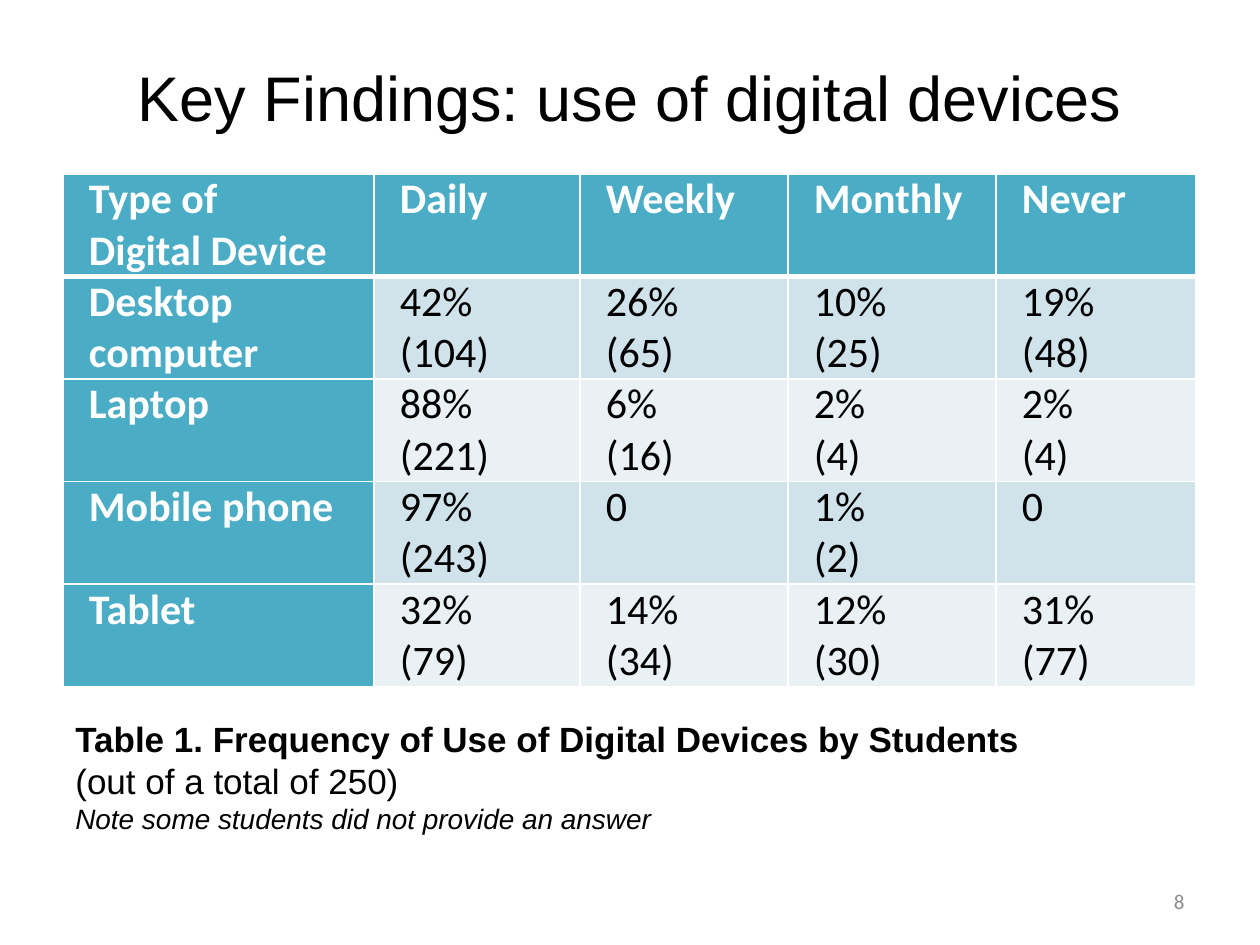
from lxml.etree import SubElement
from pptx import Presentation
from pptx.dml.color import RGBColor
from pptx.enum.text import MSO_ANCHOR, PP_ALIGN
from pptx.oxml.ns import qn
from pptx.util import Emu, Pt

PX_PER_INCH = 126
WHITE, BLACK, GREY = "FFFFFF", "000000", "8C8C8C"
TEAL, BANDS = "4BACC6", ("D0E3EA", "E9F1F5")

COLUMN_WIDTHS = (311, 206, 208, 208, 200)
ROW_HEIGHT = 102
ROWS = (
    ("Type of\nDigital Device", "Daily", "Weekly", "Monthly", "Never"),
    ("Desktop computer", "42%\n(104)", "26%\n(65)", "10%\n(25)", "19%\n(48)"),
    ("Laptop", "88%\n(221)", "6%\n(16)", "2%\n(4)", "2%\n(4)"),
    ("Mobile phone", "97%\n(243)", "0", "1%\n(2)", "0"),
    ("Tablet", "32%\n(79)", "14%\n(34)", "12%\n(30)", "31%\n(77)"),
)
CAPTION = (
    ("Table 1. Frequency of Use of Digital Devices by Students", 20, True, False),
    ("(out of a total of 250)", 20, False, False),
    ("Note some students did not provide an answer", 16, False, True),
)


def px(length):
    return Emu(round(length * 914400 / PX_PER_INCH))


def rgb(color):
    return RGBColor.from_string(color)


def style(para, font, size, color, bold=False, italic=False, align=PP_ALIGN.LEFT):
    para.alignment = align
    for span in para.runs:
        span.font.name = font
        span.font.size = Pt(size)
        span.font.color.rgb = rgb(color)
        span.font.bold = bold
        span.font.italic = italic


def set_borders(cell, widths):
    """Draw white borders; widths maps lnL, lnR, lnT and lnB to points."""
    properties = cell._tc.get_or_add_tcPr()
    for position, (side, width) in enumerate(widths.items()):
        line = SubElement(properties, qn(f"a:{side}"), w=str(Pt(width)))
        fill = SubElement(line, qn("a:solidFill"))
        SubElement(fill, qn("a:srgbClr"), val=WHITE)
        properties.insert(position, line)


def add_title(page, left, top, width, height):
    title = page.shapes.title
    title.left, title.top, title.width, title.height = map(px, (left, top, width, height))
    frame = title.text_frame
    frame.text = "Key Findings: use of digital devices"
    frame.vertical_anchor = MSO_ANCHOR.MIDDLE
    style(frame.paragraphs[0], "Arial", 36, BLACK, align=PP_ALIGN.CENTER)


def add_device_table(page, left, top):
    size = sum(COLUMN_WIDTHS), ROW_HEIGHT * len(ROWS)
    table = page.shapes.add_table(
        len(ROWS), len(COLUMN_WIDTHS), *map(px, (left, top, *size))
    ).table
    table.first_col = True
    for column, width in zip(table.columns, COLUMN_WIDTHS):
        column.width = px(width)
    for row_index, texts in enumerate(ROWS):
        table.rows[row_index].height = px(ROW_HEIGHT)
        for column_index, text in enumerate(texts):
            cell = table.cell(row_index, column_index)
            heading = row_index == 0 or column_index == 0
            cell.text = text
            cell.margin_left = cell.margin_right = px(26)
            cell.margin_top = cell.margin_bottom = 0
            cell.fill.solid()
            cell.fill.fore_color.rgb = rgb(TEAL if heading else BANDS[(row_index - 1) % 2])
            set_borders(cell, {
                "lnL": 1,
                "lnR": 1,
                "lnT": 3 if row_index == 1 else 1,
                "lnB": 3 if row_index == 0 else 1,
            })
            for para in cell.text_frame.paragraphs:
                style(para, "Calibri", 24, WHITE if heading else BLACK,
                      bold=heading, align=PP_ALIGN.JUSTIFY)


def add_caption(page, left, top, width, height):
    frame = page.shapes.add_textbox(*map(px, (left, top, width, height))).text_frame
    frame.word_wrap = True
    frame.margin_top = px(10)
    frame.text = "\n".join(line[0] for line in CAPTION)
    for para, (_, size, bold, italic) in zip(frame.paragraphs, CAPTION):
        style(para, "Arial", size, BLACK, bold, italic)


def add_page_number(page, left, top, width, height):
    frame = page.shapes.add_textbox(*map(px, (left, top, width, height))).text_frame
    frame.word_wrap = True
    frame.vertical_anchor = MSO_ANCHOR.MIDDLE
    frame.text = "8"
    style(frame.paragraphs[0], "Calibri", 12, GREY, align=PP_ALIGN.RIGHT)


def main():
    deck = Presentation()
    deck.slide_width, deck.slide_height = px(1260), px(945)
    page = deck.slides.add_slide(deck.slide_layouts[5])
    add_title(page, 63, 38, 1134, 117)
    add_device_table(page, 63, 174)
    add_page_number(page, 903, 876, 294, 50)
    add_caption(page, 63, 707, 1031, 170)
    deck.save("out.pptx")


if __name__ == "__main__":
    main()
